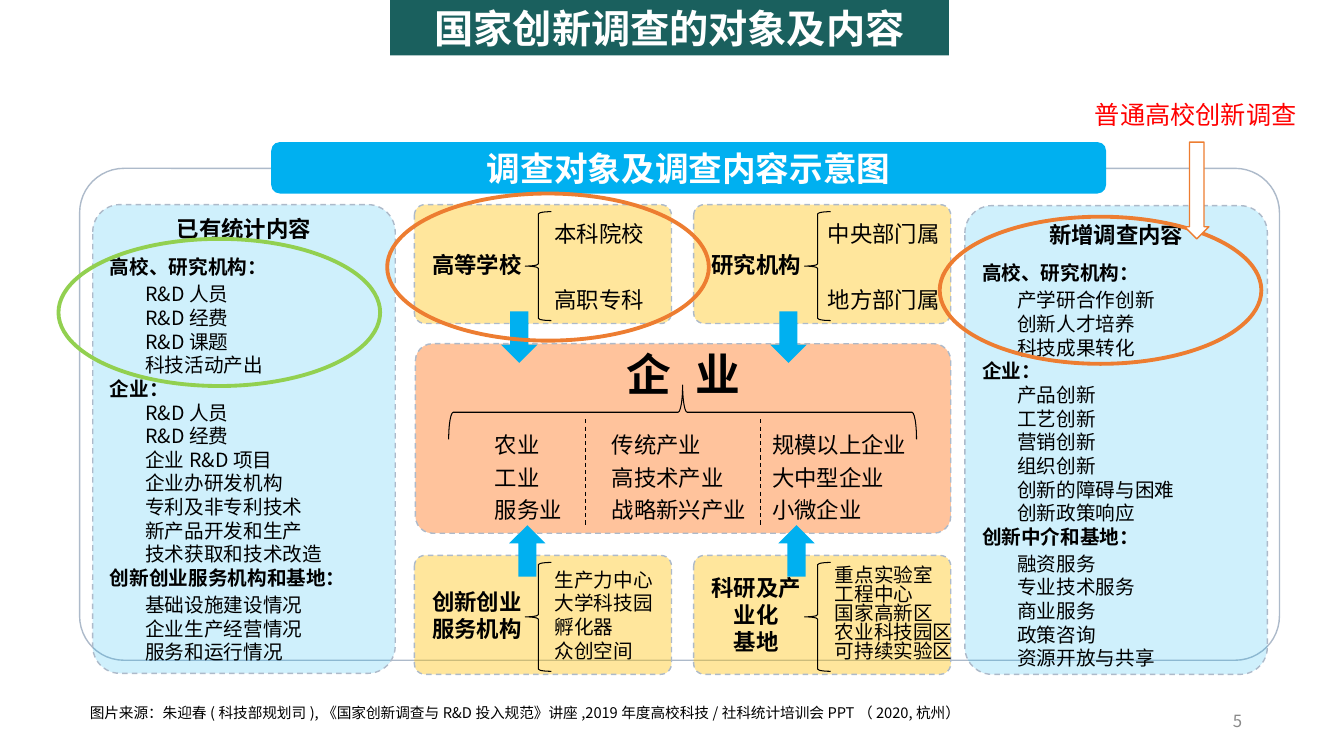
from pptx import Presentation
from pptx.dml.color import RGBColor
from pptx.enum.dml import MSO_LINE
from pptx.enum.shapes import MSO_CONNECTOR, MSO_SHAPE
from pptx.enum.text import MSO_ANCHOR, MSO_AUTO_SIZE, PP_ALIGN
from pptx.oxml.ns import qn
from pptx.util import Inches, Pt
from lxml import etree

ROUND, OVAL, RECT = MSO_SHAPE.ROUNDED_RECTANGLE, MSO_SHAPE.OVAL, MSO_SHAPE.RECTANGLE
BRACE, ARROW = MSO_SHAPE.LEFT_BRACE, MSO_SHAPE.DOWN_ARROW
LEFT, CENTER, RIGHT = PP_ALIGN.LEFT, PP_ALIGN.CENTER, PP_ALIGN.RIGHT
TOP, MIDDLE = MSO_ANCHOR.TOP, MSO_ANCHOR.MIDDLE
DASH = MSO_LINE.DASH
FONT = "Noto Sans CJK SC"
BLUE, ORANGE, GREY = "00B0F0", "ED7D31", "ADBACA"
color = RGBColor.from_string

deck = Presentation()
deck.slide_width, deck.slide_height = Inches(13.33), Inches(7.5)
page = deck.slides.add_slide(deck.slide_layouts[3])
title, *lists = page.placeholders


def draw(kind, area, fill=None, alpha=None, line=None, weight=1, dash=None, adjust=(), turn=0):
    shape = page.shapes.add_shape(kind, *map(Inches, area))
    shape.shadow.inherit = False
    shape.rotation = turn
    for index, value in enumerate(adjust):
        shape.adjustments[index] = value
    if fill:
        shape.fill.solid()
        shape.fill.fore_color.rgb = color(fill)
    else:
        shape.fill.background()
    if alpha:
        tint = shape.fill._xPr.find(qn("a:solidFill"))[0]
        etree.SubElement(tint, qn("a:alpha")).set("val", str(alpha * 1000))
    if line:
        shape.line.color.rgb = color(line)
        shape.line.width = Pt(weight)
        shape.line.dash_style = dash
    else:
        shape.line.fill.background()
    return shape


def write(target, rows, anchor=MIDDLE, **base):
    box = target if hasattr(target, "text_frame") else page.shapes.add_textbox(*map(Inches, target))
    frame = box.text_frame
    layout = dict(word_wrap=True, auto_size=MSO_AUTO_SIZE.NONE, vertical_anchor=anchor,
                  margin_left=0, margin_right=0, margin_top=0, margin_bottom=0)
    for name, value in layout.items():
        setattr(frame, name, value)
    for index, row in enumerate(rows):
        text, extra = row if isinstance(row, tuple) else (row, {})
        look = dict(size=16, bold=False, ink="000000", align=LEFT, pitch=None,
                    gap=0, indent=0, track=0) | base | extra
        para = frame.add_paragraph() if index else frame.paragraphs[0]
        marks = para._p.get_or_add_pPr()
        marks.set("marL", str(Inches(look["indent"])))
        marks.set("indent", "0")
        etree.SubElement(marks, qn("a:buNone"))
        para.alignment = look["align"]
        para.space_before = Pt(look["gap"] if index else 0)
        if look["pitch"]:
            para.line_spacing = Pt(look["pitch"])
        span = para.add_run()
        span.text = text
        for name, value in dict(name=FONT, size=Pt(look["size"]), bold=look["bold"]).items():
            setattr(span.font, name, value)
        span.font.color.rgb = color(look["ink"])
        marks = span._r.get_or_add_rPr()
        etree.SubElement(marks, qn("a:ea")).set("typeface", FONT)
        if look["track"]:
            marks.set("spc", str(look["track"]))


title.left, title.top, title.width, title.height = map(Inches, (3.87, 0, 5.54, 0.55))
title.fill.solid()
title.fill.fore_color.rgb = color("1A605E")
write(title, ["国家创新调查的对象及内容"], size=28, bold=True, ink="FFFFFF", align=CENTER)

draw(ROUND, (0.79, 1.67, 11.9, 4.88), line=GREY, adjust=[0.09])
banner = draw(ROUND, (2.69, 1.41, 8.28, 0.51), fill=BLUE)
write(banner, ["调查对象及调查内容示意图"], size=24, bold=True, ink="FFFFFF", align=CENTER)

panels = [
    (0.92, 2.03, 0.14, "已有统计内容", [
        ("高校、研究机构：", 2.4, ["R&D人员", "R&D经费", "R&D课题", "科技活动产出"]),
        ("企业：", 0, ["R&D人员", "R&D经费", "企业R&D项目", "企业办研发机构",
                     "专利及非专利技术", "新产品开发和生产", "技术获取和技术改造"]),
        ("创新创业服务机构和基地：", 2.4, ["基础设施建设情况", "企业生产经营情况", "服务和运行情况"])]),
    (9.57, 2.04, 0.19, "新增调查内容", [
        ("高校、研究机构：", 2.4, ["产学研合作创新", "创新人才培养", "科技成果转化"]),
        ("企业：", 0, ["产品创新", "工艺创新", "营销创新", "组织创新", "创新的障碍与困难", "创新政策响应"]),
        ("创新中介和基地：", 2.4, ["融资服务", "专业技术服务", "商业服务", "政策咨询", "资源开放与共享"])]),
]
for (left, top, drop, heading, groups), body in zip(panels, lists):
    panel = draw(ROUND, (left, top, 3, 4.65), BLUE, 19, GREY, dash=DASH, adjust=[0.09])
    panel._element.addnext(body._element)
    body.left, body.top, body.width, body.height = map(
        Inches, (left + 0.17, top + drop, 2.66, 4.65 - drop))
    rows = [(heading, dict(size=16, bold=True, align=CENTER))]
    for number, (name, gap, items) in enumerate(groups):
        rows.append((name, dict(bold=True, gap=0 if number else 9)))
        rows += [(item, dict(indent=0.35, gap=0 if rank else gap)) for rank, item in enumerate(items)]
    write(body, rows, TOP, size=14, pitch=16.9)

cards = [
    (4.11, 2.03, ["高等学校"], 1.39, ["本科院校", "高职专科"], dict(pitch=23, gap=24)),
    (6.88, 2.03, ["研究机构"], 1.33, ["中央部门属", "地方部门属"], dict(pitch=23, gap=24)),
    (4.11, 5.51, ["创新创业", "服务机构"], 1.39,
     ["生产力中心", "大学科技园", "孵化器", "众创空间"], dict(size=14, pitch=16.9)),
    (6.88, 5.51, ["科研及产业化", "基地"], 1.4,
     ["重点实验室", "工程中心", "国家高新区", "农业科技园区", "可持续实验区"], dict(size=14, pitch=13.6)),
]
for left, top, label, shift, items, look in cards:
    draw(ROUND, (left, top, 2.55, 1.18), "FFC000", 39, GREY, dash=DASH, adjust=[0.09])
    write((left + 0.13, top, 0.98, 1.18), label, bold=True, align=CENTER, pitch=19.3)
    draw(BRACE, (left + 1.1, top + 0.07, 0.26, 1.08), line="000000", weight=0.75)
    write((left + shift, top, 1.3, 1.18), items, **look)

draw(ROUND, (4.12, 3.41, 5.31, 1.88), "FF6600", 39, GREY, dash=DASH, adjust=[0.09])
write((5.6, 3.28, 2.35, 0.85), ["企 业"], size=32, bold=True, align=CENTER, track=500)
draw(BRACE, (6.5, 1.77, 0.54, 4.64), line="000000", weight=0.75, turn=90)
sectors = [(4.91, ["农业", "工业", "服务业"]),
           (6.07, ["传统产业", "高技术产业", "战略新兴产业"]),
           (7.66, ["规模以上企业", "大中型企业", "小微企业"])]
for left, names in sectors:
    write((left, 4.15, 1.5, 1.11), names, pitch=23.2)
for across in (5.81, 7.54):
    divider = page.shapes.add_connector(
        MSO_CONNECTOR.STRAIGHT, *map(Inches, (across, 4.16, across, 5.22)))
    divider.line.color.rgb = color("000000")
    divider.line.width = Pt(0.75)
    divider.line.dash_style = DASH
    etree.SubElement(divider._element.spPr, qn("a:effectLst"))

for left, top, turn in ((4.97, 3.09, 0), (5.05, 5.21, 180)):
    for step in (0, 2.67):
        draw(ARROW, (left + step, top, 0.36, 0.51), BLUE, turn=turn)

for left, top, ring in ((3.84, 1.92, ORANGE), (9.32, 2.15, ORANGE), (0.58, 2.37, "92D050")):
    draw(OVAL, (left, top, 3.19, 1.46), line=ring, weight=2.75)
draw(ARROW, (11.75, 1.41, 0.24, 0.96), "FFFFFF", line=ORANGE, adjust=[0.6, 0.5])
write((10.86, 0.94, 2.12, 0.4), ["普通高校创新调查"], size=18, ink="FF0000")
write((0.89, 6.93, 8.91, 0.28),
      ["图片来源：朱迎春(科技部规划司),《国家创新调查与R&D投入规范》讲座,2019年度高校科技/社科统计培训会PPT（2020,杭州）"],
      size=10.5)
write((9.42, 6.95, 2.9, 0.4), ["5"], size=12, ink="898989", align=RIGHT)

deck.save("out.pptx")
